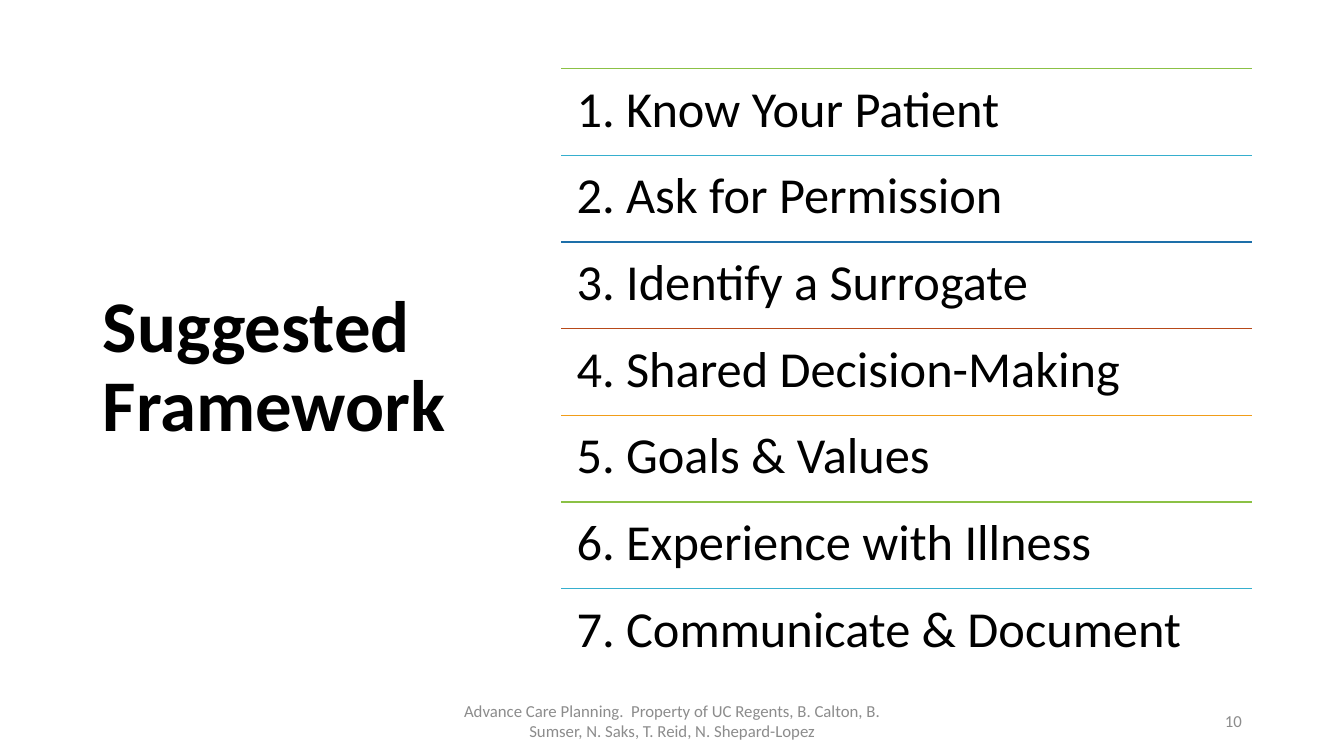
from lxml import etree
from pptx import Presentation
from pptx.dml.color import RGBColor
from pptx.enum.shapes import MSO_CONNECTOR
from pptx.enum.text import MSO_ANCHOR, MSO_AUTO_SIZE, PP_ALIGN
from pptx.oxml.ns import qn
from pptx.util import Cm, Pt

STRAIGHT = MSO_CONNECTOR.STRAIGHT
TOP, MIDDLE = MSO_ANCHOR.TOP, MSO_ANCHOR.MIDDLE
LEFT, CENTER, RIGHT = PP_ALIGN.LEFT, PP_ALIGN.CENTER, PP_ALIGN.RIGHT
NO_AUTOFIT = MSO_AUTO_SIZE.NONE

TITLE_ONLY = 5
FONT = "Calibri"
COLORS = {
    "text": "000000",
    "muted": "8C8C8C",
    "green": "8BC145",
    "cyan": "36AFCE",
    "blue": "1D6FA9",
    "rust": "B74919",
    "amber": "F19D19",
}
RULE_COLORS = ["green", "cyan", "blue", "rust", "amber"]
STEPS = [
    "Know Your Patient",
    "Ask for Permission",
    "Identify a Surrogate",
    "Shared Decision-Making",
    "Goals & Values",
    "Experience with Illness",
    "Communicate & Document",
]
FOOTER = (
    "Advance Care Planning.  Property of UC Regents, B. Calton, B. Sumser, "
    "N. Saks, T. Reid, N. Shepard-Lopez"
)


def write_text(shape, text, size, color="text", bold=False, align=LEFT, anchor=MIDDLE):
    """Fill a shape with one formatted paragraph and return the paragraph."""
    frame = shape.text_frame
    frame.text = text
    frame.word_wrap = True
    frame.auto_size = NO_AUTOFIT
    frame.vertical_anchor = anchor
    paragraph = frame.paragraphs[0]
    paragraph.alignment = align
    for span in paragraph.runs:
        span.font.name = FONT
        span.font.size = Pt(size)
        span.font.bold = bold
        span.font.color.rgb = RGBColor.from_string(COLORS[color])
    return paragraph


def add_title(page, left, top, width, height):
    """Place the heading in the title placeholder."""
    title = page.shapes.title
    title.left, title.top, title.width, title.height = left, top, width, height
    paragraph = write_text(title, "Suggested Framework", 52, bold=True)
    paragraph.line_spacing = 0.9


def add_rule(page, left, top, width, color):
    """Draw a thin horizontal rule."""
    rule = page.shapes.add_connector(STRAIGHT, left, top, left + width, top)
    rule.line.color.rgb = RGBColor.from_string(COLORS[color])
    rule.line.width = Pt(1)
    etree.SubElement(rule._element.spPr, qn("a:effectLst"))


def add_steps(page, left, top, width, height):
    """Stack the numbered steps in equal rows, each under a coloured rule."""
    row_height = height // len(STEPS)
    for index, step in enumerate(STEPS):
        row_top = top + index * row_height
        add_rule(page, left, row_top, width, RULE_COLORS[index % len(RULE_COLORS)])
        box = page.shapes.add_textbox(left, row_top, width, row_height)
        frame = box.text_frame
        frame.margin_left = frame.margin_right = Cm(0.38)
        frame.margin_top = frame.margin_bottom = Cm(0.38)
        paragraph = write_text(box, f"{index + 1}. {step}", 36, anchor=TOP)
        paragraph.line_spacing = 0.9


def add_footer(page, left, top, width, height, text, align):
    """Add a small grey line at the foot of the page."""
    box = page.shapes.add_textbox(left, top, width, height)
    write_text(box, text, 12, "muted", align=align)


def main():
    """Build and save the deck."""
    deck = Presentation()
    deck.slide_width, deck.slide_height = Cm(33.87), Cm(19.05)
    page = deck.slides.add_slide(deck.slide_layouts[TITLE_ONLY])
    add_title(page, Cm(2.34), Cm(1.55), Cm(9.37), Cm(15.47))
    add_steps(page, Cm(14.15), Cm(1.73), Cm(17.4), Cm(15.29))
    add_footer(page, Cm(11.23), Cm(17.65), Cm(11.43), Cm(1.02), FOOTER, CENTER)
    add_footer(page, Cm(23.93), Cm(17.65), Cm(7.62), Cm(1.02), "10", RIGHT)
    deck.save("out.pptx")


if __name__ == "__main__":
    main()
